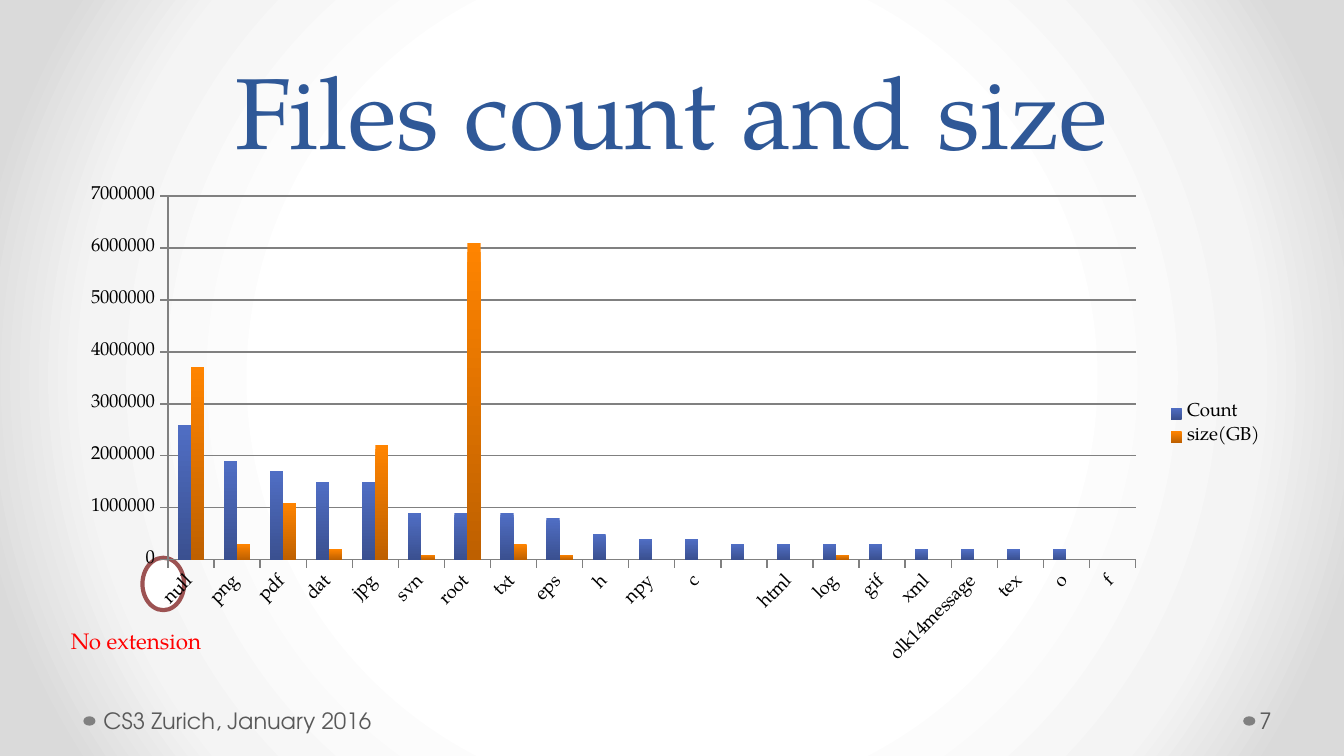
from dataclasses import dataclass

from lxml.etree import SubElement
from pptx import Presentation
from pptx.chart.data import CategoryChartData
from pptx.dml.color import RGBColor
from pptx.enum.chart import XL_CHART_TYPE, XL_LEGEND_POSITION, XL_TICK_MARK
from pptx.enum.shapes import MSO_SHAPE
from pptx.enum.text import MSO_ANCHOR, PP_ALIGN
from pptx.oxml import parse_xml
from pptx.oxml.ns import nsdecls, qn
from pptx.util import Inches, Pt

SERIF, SANS = "TeX Gyre Pagella", "TeX Gyre Adventor"
BLUE = RGBColor(0x2F, 0x58, 0x97)
DARK_GRAY = RGBColor(0x59, 0x59, 0x59)
GRAY = RGBColor(0x80, 0x80, 0x80)
BLACK = RGBColor(0, 0, 0)
WHITE = RGBColor(0xFF, 0xFF, 0xFF)
RED = RGBColor(0xFF, 0, 0)
MAROON = RGBColor(0x9C, 0x52, 0x52)
BACKGROUND_STOPS = ((50, WHITE), (76, RGBColor(0xF4, 0xF4, 0xF4)),
                    (92, RGBColor(0xDA, 0xDA, 0xDA)))


@dataclass
class Label:
    text: str
    box: tuple[float, float, float, float]
    size: int
    font: str
    color: RGBColor
    insets: tuple[float, float] = (0.1, 0.1)
    anchor: MSO_ANCHOR = MSO_ANCHOR.MIDDLE
    align: PP_ALIGN = PP_ALIGN.LEFT
    spacing: int | None = None


@dataclass
class Series:
    name: str
    values: list[int | None]  # in units of 100 000
    top: RGBColor
    bottom: RGBColor


LABELS = [
    Label("Files count and size", (0.5, 0, 9, 1.31), 54, SERIF, BLUE,
          anchor=MSO_ANCHOR.BOTTOM, align=PP_ALIGN.CENTER, spacing=58),
    Label("CS3 Zurich, January 2016", (0.72, 5.21, 3.11, 0.3), 12, SANS,
          DARK_GRAY, (0.05, 0.1)),
    Label("7", (9.34, 5.21, 0.61, 0.3), 12, SANS, DARK_GRAY, (0.03, 0.05)),
    Label("No extension", (0.43, 4.62, 2.13, 0.3), 12, SERIF, RED,
          anchor=MSO_ANCHOR.TOP),
]
EXTENSIONS = ["null", "png", "pdf", "dat", "jpg", "svn", "root", "txt", "eps",
              "h", "npy", "c", "", "html", "log", "gif", "xml",
              "olk14message", "tex", "o", "f"]
SERIES = [
    Series("Count", [26, 19, 17, 15, 15, 9, 9, 9, 8, 5, 4, 4, 3, 3, 3, 3,
                     2, 2, 2, 2, None],
           RGBColor(0x50, 0x6E, 0xC4), RGBColor(0x3A, 0x50, 0x90)),
    Series("size(GB)", [37, 3, 11, 2, 22, 1, 61, 3, 1, 0, 0, 0, 0, 0, 1, 0,
                        0, 0, 0, 0, 0],
           RGBColor(0xFF, 0x84, 0x00), RGBColor(0xBE, 0x60, 0x00)),
]


def set_background(s) -> None:
    """Fill the slide with a radial gradient."""
    stops = "".join(f'<a:gs pos="{pos * 1000}"><a:srgbClr val="{color}"/></a:gs>'
                    for pos, color in BACKGROUND_STOPS)
    s.background.fill.solid()
    bg_pr = s.background._cSld.bg.bgPr
    bg_pr.replace(bg_pr[0], parse_xml(
        f'<a:gradFill {nsdecls("a")} rotWithShape="1"><a:gsLst>{stops}</a:gsLst>'
        '<a:path path="circle"><a:fillToRect l="50000" t="50000" r="50000" '
        'b="50000"/></a:path></a:gradFill>'))


def add_label(s, label: Label) -> None:
    tf = s.shapes.add_textbox(*map(Inches, label.box)).text_frame
    tf.word_wrap = True
    tf.vertical_anchor = label.anchor
    tf.margin_left, tf.margin_right = map(Inches, label.insets)
    p = tf.paragraphs[0]
    p.text, p.alignment = label.text, label.align
    if label.spacing:
        p.line_spacing = Pt(label.spacing)
    p.font.name, p.font.size = label.font, Pt(label.size)
    p.font.color.rgb = label.color


def add_ellipse(s, box: tuple[float, float, float, float], fill: RGBColor,
                line: RGBColor | None = None) -> None:
    sp = s.shapes.add_shape(MSO_SHAPE.OVAL, *map(Inches, box))
    sp.shadow.inherit = False
    sp.fill.solid()
    sp.fill.fore_color.rgb = fill
    if line is None:
        sp.line.fill.background()
    else:
        sp.line.color.rgb = line
        sp.line.width = Pt(2.25)


def set_plot_layout(chart, x: float, y: float, w: float, h: float) -> None:
    """Place the inner plot area, in fractions of the chart."""
    area = chart._chartSpace.chart.plotArea
    for old in area.findall(qn("c:layout")):
        area.remove(old)
    layout = parse_xml(f'<c:layout {nsdecls("c")}/>')
    manual = SubElement(layout, qn("c:manualLayout"))
    for tag, value in (("layoutTarget", "inner"), ("xMode", "edge"),
                       ("yMode", "edge"), ("x", x), ("y", y), ("w", w), ("h", h)):
        SubElement(manual, qn(f"c:{tag}")).set("val", str(value))
    area.insert(0, layout)


def add_file_chart(s) -> None:
    data = CategoryChartData()
    data.categories = EXTENSIONS
    for series in SERIES:
        data.add_series(series.name, [None if v is None else v * 100_000
                                      for v in series.values])
    chart = s.shapes.add_chart(XL_CHART_TYPE.COLUMN_CLUSTERED, Inches(0.5),
                               Inches(1.31), Inches(9), Inches(3.71), data).chart
    chart.has_title = False
    chart.font.name, chart.font.size = SERIF, Pt(10)
    chart.font.color.rgb = BLACK
    chart.has_legend = True
    chart.legend.position = XL_LEGEND_POSITION.RIGHT
    chart.legend.include_in_layout = False
    set_plot_layout(chart, 1 / 12, 0.04, 0.8, 0.73)

    plot = chart.plots[0]
    plot.gap_width, plot.overlap, plot.vary_by_categories = 150, 0, False
    for drawn, series in zip(plot.series, SERIES):
        fill = drawn.format.fill
        fill.gradient()
        fill.gradient_angle = 270
        for stop, color in zip(fill.gradient_stops, (series.top, series.bottom)):
            stop.color.rgb = color
        drawn.invert_if_negative = False

    for axis in (chart.category_axis, chart.value_axis):
        axis.major_tick_mark = XL_TICK_MARK.OUTSIDE
        axis.format.line.color.rgb = GRAY
        axis.tick_labels.font.size = Pt(10)
    chart.category_axis._element.txPr.bodyPr.set("rot", "-2700000")
    axis = chart.value_axis
    axis.minimum_scale, axis.maximum_scale, axis.major_unit = 0, 7_000_000, 1_000_000
    axis.major_gridlines.format.line.color.rgb = GRAY
    axis.tick_labels.number_format = "General"
    axis.tick_labels.number_format_is_linked = False


def main() -> None:
    prs = Presentation()
    prs.slide_width = Inches(10)
    prs.slide_height = Inches(10 * 9 / 16)
    s = prs.slides.add_slide(prs.slide_layouts[6])
    set_background(s)
    for left in (9.25, 0.62):
        add_ellipse(s, (left, 5.33, 0.09, 0.07), GRAY)
    add_ellipse(s, (1.06, 4.15, 0.31, 0.39), WHITE, MAROON)
    add_file_chart(s)
    for label in LABELS:
        add_label(s, label)
    prs.save("out.pptx")


if __name__ == "__main__":
    main()
